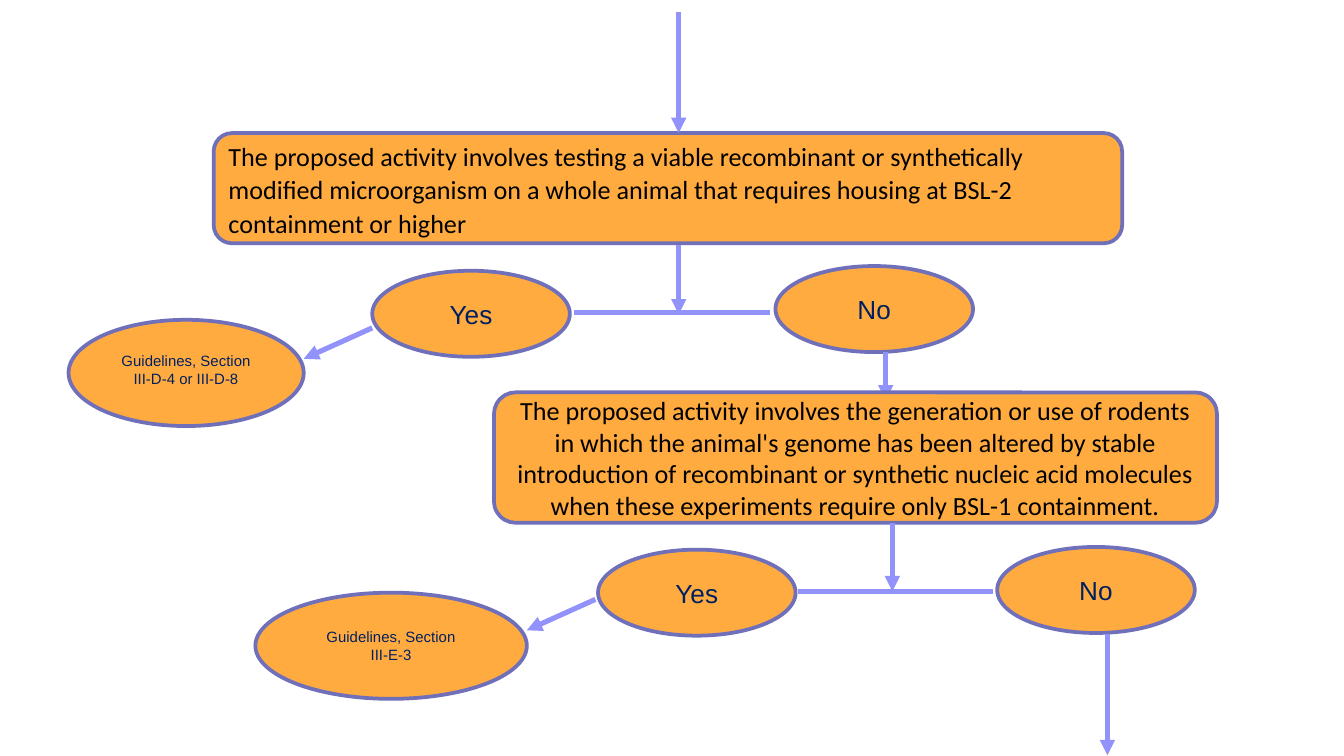
"""Build a biosafety decision flowchart with two yes/no questions."""

from dataclasses import dataclass

import lxml.etree
import pptx
import pptx.dml.color
import pptx.enum.shapes
import pptx.enum.text
import pptx.oxml.ns
import pptx.slide
import pptx.util

EMU_PER_PX = 4572
SHAPE_KIND = pptx.enum.shapes.MSO_SHAPE
ALIGN = pptx.enum.text.PP_ALIGN


def px(length: int) -> pptx.util.Emu:
    """Turn a length in px, at 200 px to the inch, into EMU."""
    return pptx.util.Emu(length * EMU_PER_PX)


def color(value: str) -> pptx.dml.color.RGBColor:
    """Read a hexadecimal colour."""
    return pptx.dml.color.RGBColor.from_string(value)


@dataclass(frozen=True)
class TextStyle:
    """Font, size in points and colour of a text."""

    name: str
    size: int
    color: str


@dataclass(frozen=True)
class Theme:
    """Colours, line widths and text styles of the flowchart."""

    fill: str = "FFAB40"
    outline: str = "6F6FBA"
    arrow: str = "9292FB"
    outline_width: float = 2
    arrow_width: float = 2.75
    question: TextStyle = TextStyle("Calibri", 14, "000000")
    answer: TextStyle = TextStyle("Arial", 14, "002060")
    guideline: TextStyle = TextStyle("Arial", 8, "002060")


THEME = Theme()


@dataclass(frozen=True)
class Node:
    """A filled shape holding one or more paragraphs."""

    left: int
    top: int
    width: int
    height: int
    paragraphs: tuple[str, ...]
    style: TextStyle
    kind: SHAPE_KIND = SHAPE_KIND.OVAL
    alignment: ALIGN = ALIGN.CENTER
    line_spacing: float = 1.0
    bottom_inset: int = 8


@dataclass(frozen=True)
class Link:
    """A straight line, with an arrowhead at its end unless plain."""

    start: tuple[int, int]
    end: tuple[int, int]
    arrow: bool = True


def question(left: int, top: int, width: int, height: int, *paragraphs: str,
             alignment: ALIGN = ALIGN.CENTER, line_spacing: float = 1.0) -> Node:
    """Describe a rounded question box."""
    return Node(left, top, width, height, paragraphs, THEME.question,
                SHAPE_KIND.ROUNDED_RECTANGLE, alignment, line_spacing)


def answer(left: int, top: int, text: str) -> Node:
    """Describe a yes or no ellipse."""
    return Node(left, top, 294, 128, (text,), THEME.answer)


def guideline(left: int, top: int, width: int, *paragraphs: str, bottom_inset: int = 8) -> Node:
    """Describe an ellipse naming the section that applies."""
    return Node(left, top, width, 158, paragraphs, THEME.guideline, bottom_inset=bottom_inset)


ELEMENTS: tuple[Node | Link, ...] = (
    question(
        318, 198, 1352, 164,
        "The proposed activity involves testing a viable recombinant or synthetically modified "
        "microorganism on a whole animal that requires housing at BSL-2 containment or higher",
        alignment=ALIGN.LEFT, line_spacing=1.07,
    ),
    Link((1010, 364), (1010, 468)),
    Link((854, 465), (1146, 465), arrow=False),
    guideline(102, 476, 350, "Guidelines, Section III-D-4 or III-D-8", bottom_inset=18),
    answer(554, 403, "Yes"),
    answer(1154, 396, "No"),
    Link((554, 488), (452, 534)),
    Link((1318, 524), (1318, 596)),
    question(
        735, 584, 1076, 194,
        "The proposed activity involves the generation or use of rodents in which the animal's "
        "genome has been altered by stable introduction of recombinant or synthetic nucleic acid "
        "molecules",
        "when these experiments require only BSL-1 containment.",
    ),
    Link((1328, 778), (1328, 880)),
    Link((1188, 880), (1478, 880), arrow=False),
    answer(890, 818, "Yes"),
    answer(1484, 814, "No"),
    Link((886, 892), (784, 938)),
    guideline(380, 882, 404, "Guidelines, Section", "III-E-3"),
    Link((1648, 944), (1648, 1124)),
    Link((1010, 18), (1010, 198)),
)


def set_values(target: object, values: dict[str, object]) -> None:
    """Set each named attribute of an object."""
    for name, value in values.items():
        setattr(target, name, value)


def draw_node(slide: pptx.slide.Slide, node: Node) -> None:
    """Draw a filled shape with its text."""
    shape = slide.shapes.add_shape(
        node.kind, px(node.left), px(node.top), px(node.width), px(node.height))
    shape.shadow.inherit = False
    shape.fill.solid()
    shape.fill.fore_color.rgb = color(THEME.fill)
    shape.line.color.rgb = color(THEME.outline)
    shape.line.width = pptx.util.Pt(THEME.outline_width)
    frame = shape.text_frame
    set_values(frame, {
        "word_wrap": True,
        "vertical_anchor": pptx.enum.text.MSO_ANCHOR.MIDDLE,
        "margin_left": px(14),
        "margin_right": px(14),
        "margin_top": px(8),
        "margin_bottom": px(node.bottom_inset),
        "text": "\n".join(node.paragraphs),
    })
    for paragraph in frame.paragraphs:
        set_values(paragraph, {"alignment": node.alignment, "line_spacing": node.line_spacing})
        set_values(paragraph.font, {"name": node.style.name,
                                    "size": pptx.util.Pt(node.style.size)})
        paragraph.font.color.rgb = color(node.style.color)


def draw_link(slide: pptx.slide.Slide, link: Link) -> None:
    """Draw a straight connector with an optional arrowhead."""
    connector = slide.shapes.add_connector(
        pptx.enum.shapes.MSO_CONNECTOR.STRAIGHT,
        *(px(length) for length in link.start + link.end))
    connector.line.color.rgb = color(THEME.arrow)
    connector.line.width = pptx.util.Pt(THEME.arrow_width)
    properties = connector.element.spPr
    if link.arrow:
        outline = properties.find(pptx.oxml.ns.qn("a:ln"))
        lxml.etree.SubElement(outline, pptx.oxml.ns.qn("a:tailEnd"), type="triangle")
    lxml.etree.SubElement(properties, pptx.oxml.ns.qn("a:effectLst"))


def main() -> None:
    """Draw every element on a blank slide and save the presentation."""
    presentation = pptx.Presentation()
    set_values(presentation, {"slide_width": px(2000), "slide_height": px(1125)})
    slide = presentation.slides.add_slide(presentation.slide_layouts[6])
    for element in ELEMENTS:
        if isinstance(element, Node):
            draw_node(slide, element)
        else:
            draw_link(slide, element)
    presentation.save("out.pptx")


if __name__ == "__main__":
    main()
